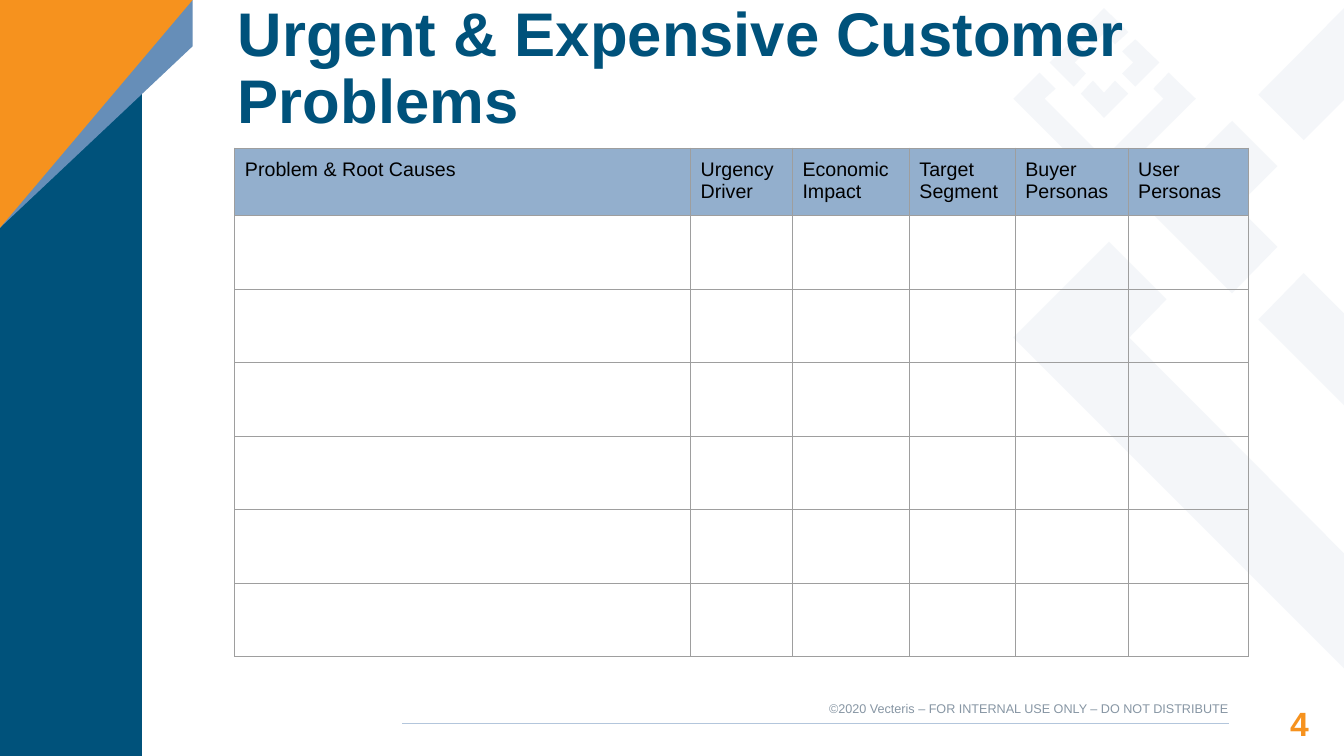
from lxml.etree import SubElement as Sub
from pptx import Presentation
from pptx.dml.color import RGBColor as RGB
from pptx.enum.shapes import MSO_CONNECTOR as Link
from pptx.enum.text import MSO_ANCHOR as Anchor, PP_ALIGN as Align
from pptx.oxml.ns import qn
from pptx.util import Inches, Pt

NAVY, STEEL, GOLD = "00527B", "668EB8", "F6921E"
PALE, RULE, GREY = "E9EEF4", "B3C6DC", "8796A4"
HEAD, EDGE, INK = "93AFCD", "9E9E9E", "000000"

CHEVRONS = [
    [(12.22, 1.2), (11.36, 2.05), (12.22, 2.91), (12.67, 2.45), (12.27, 2.05), (12.67, 1.65)],
    [(11, 2.4), (10.05, 3.35), (13.33, 6.63), (13.33, 5.49), (11.2, 3.35), (11.57, 2.97)],
    [(12.93, 2.71), (12.48, 3.17), (13.33, 4.02), (13.33, 3.11)],
    [(13.33, 0.08), (12.48, 0.94), (12.93, 1.39), (13.33, 0.99)],
    [(11.26, 0.39), (11.13, 0.51), (11.24, 0.62), (11.13, 0.73), (11.26, 0.86), (11.5, 0.62)],
    [(10.65, 0.39), (10.41, 0.62), (10.65, 0.86), (10.77, 0.73), (10.66, 0.62), (10.77, 0.51)],
    [(10.95, 0.08), (10.72, 0.32), (10.84, 0.44), (10.95, 0.33), (11.06, 0.44), (11.19, 0.32)],
    [(10.84, 0.8), (10.72, 0.93), (10.95, 1.17), (11.19, 0.93), (11.06, 0.8), (10.95, 0.92)],
    [(10.31, 0.72), (10.05, 0.98), (10.95, 1.88), (11.86, 0.98), (11.59, 0.72),
     (11.44, 0.88), (11.54, 0.98), (10.95, 1.57), (10.36, 0.98), (10.47, 0.88)],
]
CORNER = [
    ([(0, 0), (1.41, 0), (1.41, 7.5), (0, 7.5)], NAVY),
    ([(1.91, 0), (0, 0), (0, 2.26), (1.91, 0.46)], STEEL),
    ([(1.91, 0), (0, 0), (0, 2.26)], GOLD),
]
TITLES = ["Problem & Root Causes", "Urgency Driver", "Economic Impact",
          "Target Segment", "Buyer Personas", "User\nPersonas"]
WIDTHS = [4.52, 1.01, 1.16, 1.05, 1.12, 1.19]
HEIGHTS = [0.66] + [0.73] * 6


def paint(hue):
    return RGB.from_string(hue)


def style(item, form):
    for name, value in form.items():
        setattr(item, name, value)


def write(para, hue, **form):
    style(para.font, {"name": "Arial", **form})
    para.font.color.rgb = paint(hue)


def polygon(slide, points, hue, alpha=None):
    spots = [(Inches(x), Inches(y)) for x, y in points]
    pen = slide.shapes.build_freeform(*spots[0])
    pen.add_line_segments(spots[1:], close=True)
    shape = pen.convert_to_shape()
    shape.shadow.inherit = False
    shape.line.fill.background()
    shape.fill.solid()
    shape.fill.fore_color.rgb = paint(hue)
    if alpha:
        tint = shape.fill._xPr.find(qn("a:solidFill"))[0]
        Sub(tint, qn("a:alpha"), val=str(alpha * 1000))


def rule(slide, left, right, y):
    line = slide.shapes.add_connector(
        Link.STRAIGHT, Inches(left), Inches(y), Inches(right), Inches(y))
    line.line.color.rgb = paint(RULE)
    line.line.width = Pt(0.8)
    Sub(line._element.spPr, qn("a:effectLst"))


def label(slide, text, area, hue, frame={}, para={}, **form):
    box = slide.shapes.add_textbox(*map(Inches, area)).text_frame
    style(box, {"word_wrap": True, "margin_left": 0, "margin_right": 0,
                "margin_top": 0, "margin_bottom": 0, **frame})
    first = box.paragraphs[0]
    first.text = text
    style(first, para)
    write(first, hue, **form)


def border(cell):
    props = cell._tc.get_or_add_tcPr()
    for at, side in enumerate(("lnL", "lnR", "lnT", "lnB")):
        line = Sub(props, qn("a:" + side), w=str(Pt(0.75)))
        fill = Sub(line, qn("a:solidFill"))
        Sub(fill, qn("a:srgbClr"), val=EDGE)
        props.insert(at, line)


def grid(slide, left, top):
    table = slide.shapes.add_table(
        len(HEIGHTS), len(WIDTHS), Inches(left), Inches(top),
        Inches(sum(WIDTHS)), Inches(sum(HEIGHTS))).table
    style(table, {"first_row": False, "horz_banding": False})
    for col, width in zip(table.columns, WIDTHS):
        col.width = Inches(width)
    for row, height in zip(table.rows, HEIGHTS):
        row.height = Inches(height)
    for cell in table.iter_cells():
        cell.fill.background()
        border(cell)
    for cell, text in zip(table.rows[0].cells, TITLES):
        cell.text = text
        cell.fill.solid()
        cell.fill.fore_color.rgb = paint(HEAD)
        pad = Inches(0.1)
        style(cell, {"margin_left": pad, "margin_right": pad,
                     "margin_top": pad, "margin_bottom": pad})
        for para in cell.text_frame.paragraphs:
            write(para, INK, size=Pt(14))


def main():
    deck = Presentation()
    style(deck, {"slide_width": Inches(13.33), "slide_height": Inches(7.5)})
    slide = deck.slides.add_slide(deck.slide_layouts[6])
    for points in CHEVRONS:
        polygon(slide, points, PALE, 49)
    for points, hue in CORNER:
        polygon(slide, points, hue)
    rule(slide, 3.99, 12.19, 7.18)
    label(slide, "4", (12.18, 6.9, 0.8, 0.38), GOLD,
          para={"alignment": Align.RIGHT, "line_spacing": 1.19}, size=Pt(24), bold=True)
    label(slide, "©2020 Vecteris – FOR INTERNAL USE ONLY – DO NOT DISTRIBUTE",
          (7.92, 6.95, 4.26, 0.15), GREY, para={"alignment": Align.RIGHT}, size=Pt(9))
    grid(slide, 2.33, 1.47)
    label(slide, "Urgent & Expensive Customer Problems", (2.36, 0.35, 10.61, 0.68), NAVY,
          frame={"vertical_anchor": Anchor.MIDDLE, "margin_top": Inches(0.01)},
          para={"line_spacing": 0.9}, size=Pt(44), bold=True)
    deck.save("out.pptx")


if __name__ == "__main__":
    main()
